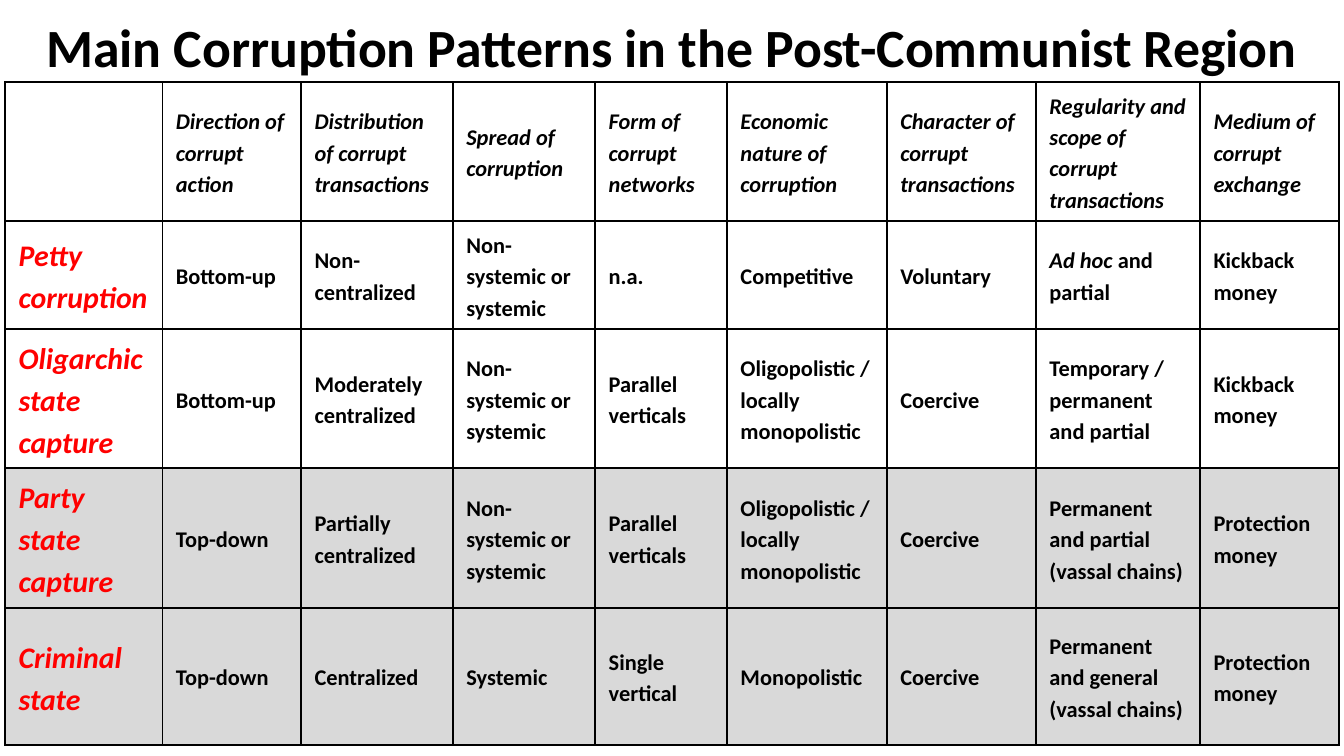
from lxml.etree import SubElement
from pptx import Presentation
from pptx.dml.color import RGBColor
from pptx.enum.text import MSO_ANCHOR, PP_ALIGN
from pptx.oxml.ns import qn
from pptx.util import Cm, Pt

COLORS = {"white": "FFFFFF", "black": "000000", "red": "FF0000", "grey": "D9D9D9"}
COL_WIDTHS = [2.97, 2.62, 2.87, 2.69, 2.49, 3.02, 2.82, 3.1, 2.62]
ROW_HEIGHTS = [2.59, 1.88, 2.11, 2.59, 2.59]
ROWS = [
    ["", "Direction of corrupt action", "Distribution of corrupt transactions",
     "Spread of corruption", "Form of corrupt networks",
     "Economic nature of corruption", "Character of corrupt transactions",
     "Regularity and scope of corrupt transactions", "Medium of corrupt exchange"],
    ["Petty corruption", "Bottom-up", "Non-centralized", "Non-systemic or systemic",
     "n.a.", "Competitive", "Voluntary", "*Ad hoc *and partial", "Kickback money"],
    ["Oligarchic state\ncapture", "Bottom-up", "Moderately centralized",
     "Non-systemic or systemic", "Parallel verticals",
     "Oligopolistic / locally monopolistic", "Coercive",
     "Temporary / permanent and partial", "Kickback money"],
    ["Party\nstate capture", "Top-down", "Partially centralized",
     "Non-systemic or systemic", "Parallel verticals",
     "Oligopolistic / locally monopolistic", "Coercive",
     "Permanent and partial\n(vassal chains)", "Protection money"],
    ["Criminal state", "Top-down", "Centralized", "Systemic", "Single vertical",
     "Monopolistic", "Coercive", "Permanent and general\n(vassal chains)",
     "Protection money"],
]


def add_run(p, text, size, color, italic=False):
    r = p.add_run()
    r.text = text
    r.font.name = "Calibri"
    r.font.size = Pt(size)
    r.font.bold = True
    r.font.italic = italic
    r.font.color.rgb = RGBColor.from_string(COLORS[color])


def add_borders(cell):
    tcPr = cell._tc.get_or_add_tcPr()
    for side in ("a:lnL", "a:lnR", "a:lnT", "a:lnB"):
        ln = SubElement(tcPr, qn(side), w=str(Pt(1)))
        fill = SubElement(ln, qn("a:solidFill"))
        SubElement(fill, qn("a:srgbClr"), val=COLORS["black"])


prs = Presentation()
prs.slide_width, prs.slide_height = Cm(25.4), Cm(14.28)
s = prs.slides.add_slide(prs.slide_layouts[5])

title = s.shapes.title
title.left, title.top, title.width, title.height = Cm(0.5), Cm(0.2), Cm(24.4), Cm(1.35)
title.fill.solid()
title.fill.fore_color.rgb = RGBColor.from_string(COLORS["white"])
tf = title.text_frame
tf.word_wrap = True
tf.vertical_anchor = MSO_ANCHOR.MIDDLE
p = tf.paragraphs[0]
p.alignment = PP_ALIGN.CENTER
add_run(p, "Main Corruption Patterns in the Post-Communist Region", 28.8, "black")

table = s.shapes.add_table(len(ROWS), len(COL_WIDTHS), Cm(0.1), Cm(1.55),
                           Cm(sum(COL_WIDTHS)), Cm(sum(ROW_HEIGHTS))).table
table.first_row = table.horz_banding = False
for column, width in zip(table.columns, COL_WIDTHS):
    column.width = Cm(width)
for row, height in zip(table.rows, ROW_HEIGHTS):
    row.height = Cm(height)

for i, texts in enumerate(ROWS):
    for j, text in enumerate(texts):
        cell = table.cell(i, j)
        add_borders(cell)
        cell.fill.solid()
        cell.fill.fore_color.rgb = RGBColor.from_string(COLORS["grey" if i > 2 else "white"])
        cell.vertical_anchor = MSO_ANCHOR.MIDDLE
        size, color = (16, "red") if j == 0 else (12, "black")
        tf = cell.text_frame
        for n, line in enumerate(text.split("\n")):
            p = tf.add_paragraph() if n else tf.paragraphs[0]
            p.line_spacing = 1.15
            for k, part in enumerate(line.split("*")):
                if part:
                    add_run(p, part, size, color, i == 0 or j == 0 or k == 1)

prs.save("out.pptx")
